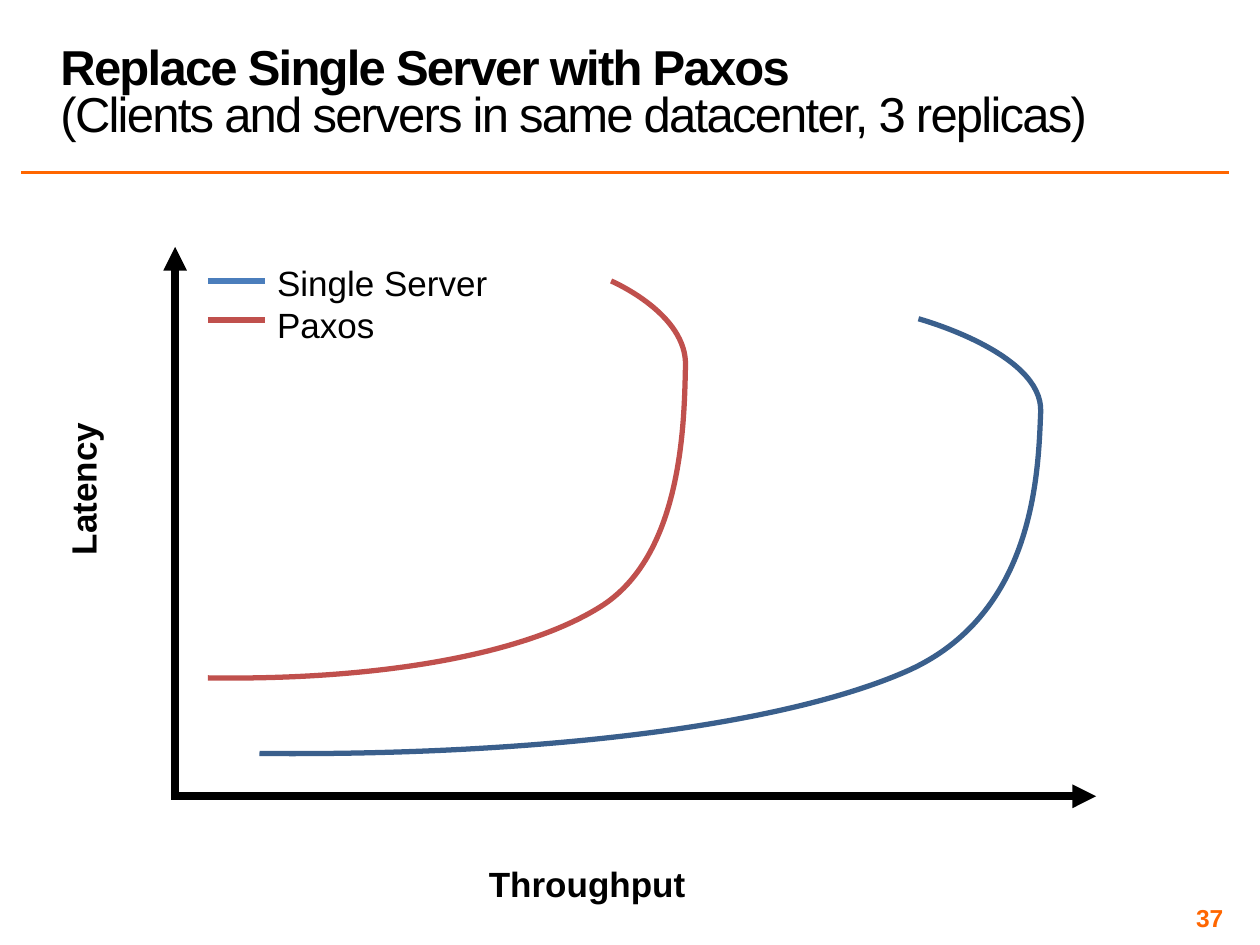
"""Builds a slide comparing latency and throughput of one server and Paxos."""
from lxml import etree
from pptx import Presentation
from pptx.dml.color import RGBColor
from pptx.enum.shapes import MSO_CONNECTOR
from pptx.enum.text import MSO_ANCHOR, MSO_AUTO_SIZE, PP_ALIGN
from pptx.oxml.ns import qn
from pptx.util import Inches, Pt

STRAIGHT = MSO_CONNECTOR.STRAIGHT
LEFT, CENTER, RIGHT = PP_ALIGN.LEFT, PP_ALIGN.CENTER, PP_ALIGN.RIGHT
BOTTOM, MIDDLE, TOP = MSO_ANCHOR.BOTTOM, MSO_ANCHOR.MIDDLE, MSO_ANCHOR.TOP
NO_FIT = MSO_AUTO_SIZE.NONE

FONT = "Arial"
HEX = {"ink": "000000", "accent": "FF6600", "server": "3A5F8C",
       "key": "4B7EBC", "paxos": "C0504D"}
TITLE = ("Replace Single Server with Paxos",
         "(Clients and servers in same datacenter, 3 replicas)")
LEGEND = [("Single Server", "key"), ("Paxos", "paxos")]
LINES = [
    ((0.17, 1.37), (9.75, 1.37), "accent", 2, False),
    ((1.39, 6.34), (1.39, 1.96), "ink", 4.5, True),
    ((1.36, 6.32), (8.7, 6.32), "ink", 4.5, True),
]
CURVES = {
    "server": [(2.06, 5.98), (4.18, 6), (6.16, 5.78), (7.19, 5.33),
               (8.22, 4.88), (8.24, 3.74), (8.26, 3.27),
               (8.28, 2.8), (7.29, 2.53), (7.29, 2.53)],
    "paxos": [(1.65, 5.38), (2.95, 5.4), (4.16, 5.21), (4.79, 4.8),
              (5.42, 4.38), (5.43, 3.34), (5.44, 2.91),
              (5.46, 2.49), (4.85, 2.23), (4.85, 2.23)],
}
KEY_X, KEY_Y, KEY_W, KEY_GAP = 1.65, 2.23, 0.45, 0.31


def color(name):
    return RGBColor.from_string(HEX[name])


def style(run, size, name="ink", bold=False):
    font = run.font
    font.name, font.size, font.bold = FONT, Pt(size), bold
    font.color.rgb = color(name)


def add_line(slide, start, end, name, width, arrow=False):
    line = slide.shapes.add_connector(
        STRAIGHT, *(Inches(v) for v in (*start, *end)))
    line.line.color.rgb = color(name)
    line.line.width = Pt(width)
    if arrow:
        etree.SubElement(line.line._get_or_add_ln(), qn("a:tailEnd"),
                         type="triangle")
    etree.SubElement(line._element.spPr, qn("a:effectLst"))


def add_text(slide, box, lines, size, name="ink", bold=False,
             align=LEFT, anchor=TOP, wrap=False):
    shape = slide.shapes.add_textbox(*(Inches(v) for v in box))
    frame = shape.text_frame
    frame.text = "\n".join(lines)
    frame.word_wrap, frame.vertical_anchor = wrap, anchor
    for para in frame.paragraphs:
        para.alignment = align
        style(para.runs[0], size, name, bold)
    return shape


def add_curve(slide, points, name):
    spots = [(Inches(x), Inches(y)) for x, y in points]
    pen = slide.shapes.build_freeform(*spots[0])
    pen.add_line_segments(spots[3::3], close=False)
    curve = pen.convert_to_shape()
    for n, leg in enumerate(list(curve._element.iter(qn("a:lnTo")))):
        bend = etree.Element(qn("a:cubicBezTo"))
        for x, y in spots[3 * n + 1:3 * n + 4]:
            etree.SubElement(bend, qn("a:pt"), x=str(x - curve.left),
                             y=str(y - curve.top))
        leg.getparent().replace(leg, bend)
    curve.shadow.inherit = False
    curve.fill.background()
    curve.line.color.rgb = color(name)
    curve.line.width = Pt(3)


def set_title(slide):
    title = slide.shapes.title
    title.left, title.top, title.width, title.height = (
        Inches(v) for v in (0.38, 0.01, 9.37, 1.17))
    frame = title.text_frame
    frame.auto_size, frame.vertical_anchor = NO_FIT, BOTTOM
    frame.word_wrap = True
    para = frame.paragraphs[0]
    para.text = "\v".join(TITLE)
    para.alignment, para.line_spacing = LEFT, 0.8
    for run, bold in zip(para.runs, (True, False)):
        style(run, 28, bold=bold)
        run.font._element.set("spc", "-100")


def main():
    deck = Presentation()
    deck.slide_width, deck.slide_height = Inches(10), Inches(7.5)
    slide = deck.slides.add_slide(deck.slide_layouts[5])
    set_title(slide)
    for line in LINES:
        add_line(slide, *line)
    for name, points in CURVES.items():
        add_curve(slide, points, name)
    for row, (_, name) in enumerate(LEGEND):
        y = KEY_Y + row * KEY_GAP
        add_line(slide, (KEY_X, y), (KEY_X + KEY_W, y), name, 3)
    add_text(slide, (KEY_X + KEY_W, 2.03, 1.89, 0.77),
             [label for label, _ in LEGEND], 20)
    side = add_text(slide, (0.03, 3.66, 1.26, 0.44), ["Latency"], 20,
                    bold=True, align=CENTER)
    side.rotation = 270
    add_text(slide, (3.77, 6.8, 1.78, 0.44), ["Throughput"], 20,
             bold=True, align=CENTER)
    page = add_text(slide, (7.42, 7.17, 2.33, 0.23), ["37"], 14, "accent",
                    True, RIGHT, MIDDLE, True).text_frame
    page.margin_left = page.margin_right = Inches(0.04)
    page.margin_top = page.margin_bottom = Inches(0.04)
    deck.save("out.pptx")


if __name__ == "__main__":
    main()
